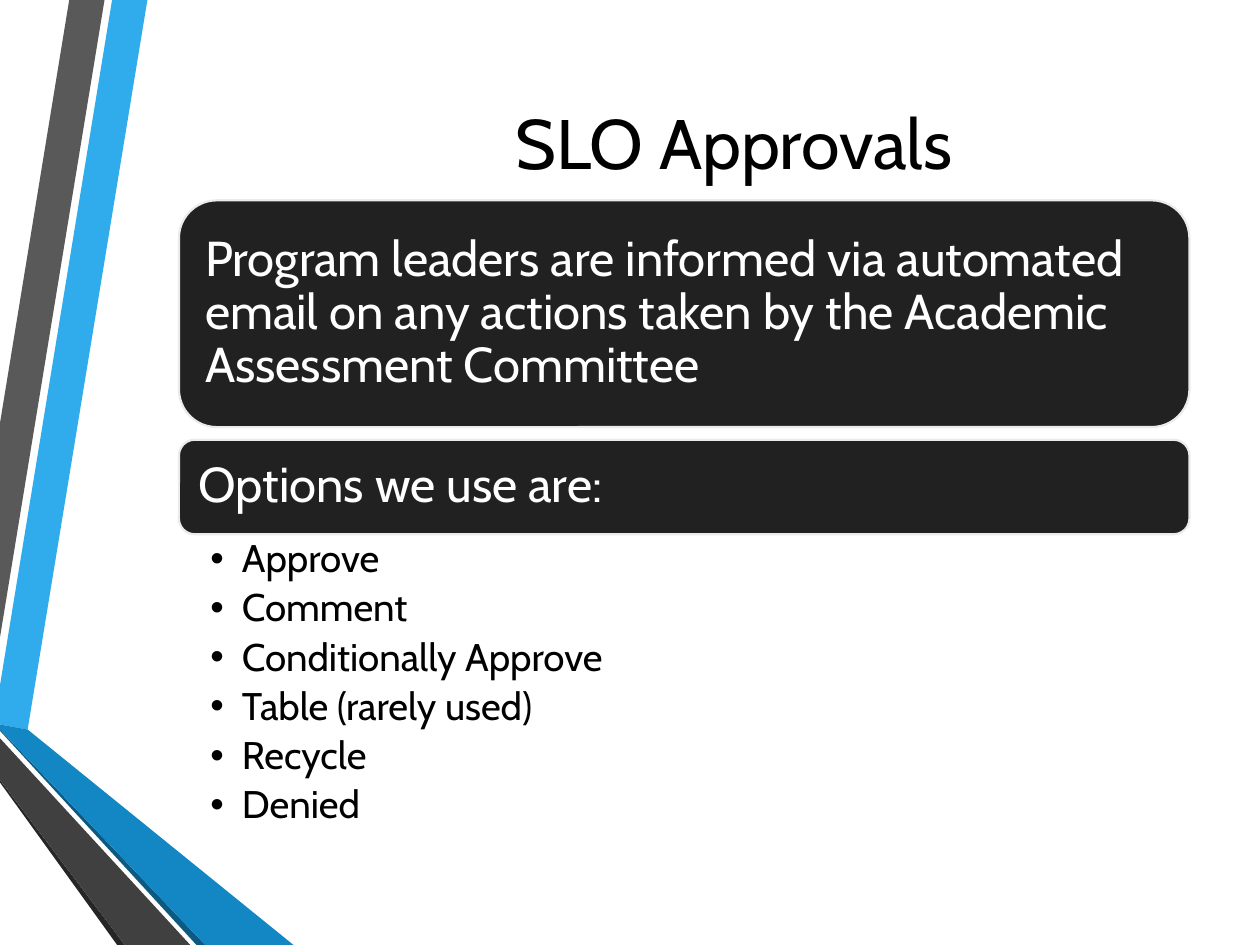
from dataclasses import dataclass

from pptx import Presentation
from pptx.dml.color import RGBColor
from pptx.enum.shapes import MSO_SHAPE
from pptx.enum.text import MSO_ANCHOR, MSO_AUTO_SIZE, PP_ALIGN
from pptx.oxml.xmlchemy import OxmlElement
from pptx.util import Emu, Inches, Pt

ROUNDED = MSO_SHAPE.ROUNDED_RECTANGLE
TOP, MIDDLE = MSO_ANCHOR.TOP, MSO_ANCHOR.MIDDLE
NO_FIT = MSO_AUTO_SIZE.NONE
LEFT, CENTER = PP_ALIGN.LEFT, PP_ALIGN.CENTER

FONT = "Cabin"
BLACK = RGBColor(0x00, 0x00, 0x00)
WHITE = RGBColor(0xFF, 0xFF, 0xFF)
CARD_FILL = RGBColor(0x21, 0x21, 0x21)
CARD_EDGE = RGBColor(0xEB, 0xEB, 0xEB)
SKY = RGBColor(0x30, 0xAC, 0xEC)
BLUE = RGBColor(0x12, 0x87, 0xC3)
NAVY = RGBColor(0x0C, 0x5A, 0x82)
GRAY = RGBColor(0x59, 0x59, 0x59)
DARK_GRAY = RGBColor(0x40, 0x40, 0x40)
CHARCOAL = RGBColor(0x26, 0x26, 0x26)

# The slide is a grid of square cells
COLUMNS, ROWS = 100, 75
SLIDE_WIDTH = Inches(10)
CELL = SLIDE_WIDTH / COLUMNS
CONTENT_LEFT, CONTENT_WIDTH = 14.2, 80.2


def cells(count: float) -> Emu:
    return Emu(round(count * CELL))


@dataclass(frozen=True)
class Area:
    left: float
    top: float
    width: float
    height: float

    def lengths(self) -> tuple[Emu, Emu, Emu, Emu]:
        return cells(self.left), cells(self.top), cells(self.width), cells(self.height)


@dataclass(frozen=True)
class Ribbon:
    color: RGBColor
    corners: tuple[tuple[float, float], ...]


@dataclass(frozen=True)
class Card:
    text: str
    top: float
    height: float


RIBBONS = (
    Ribbon(SKY, ((0, 54.4), (0, 57.5), (2.2, 57.9), (11.7, 0), (8.9, 0))),
    Ribbon(GRAY, ((8.3, 0), (5.5, 0), (0, 33.6), (0, 50.6))),
    Ribbon(CHARCOAL, ((0, 61.9), (0, 62.1), (9.3, ROWS), (9.9, ROWS))),
    Ribbon(NAVY, ((0, 57.9), (0, 58), (15.6, ROWS), (16.3, ROWS))),
    Ribbon(BLUE, ((0, 57.9), (16.3, ROWS), (23.3, ROWS), (2.2, 57.9), (0, 57.5))),
    Ribbon(DARK_GRAY, ((0, 61.9), (9.9, ROWS), (15.1, ROWS), (0, 58.6))),
)
CARDS = (
    Card("Program leaders are informed via automated email on any actions "
         "taken by the Academic Assessment Committee", 15.9, 18),
    Card("Options we use are:", 34.9, 7.5),
)
OPTIONS = ("Approve", "Comment", "Conditionally Approve",
           "Table (rarely used)", "Recycle", "Denied")


def add_text(paragraph, text: str, size: float, color: RGBColor) -> None:
    run = paragraph.add_run()
    run.text = text
    run.font.name = FONT
    run.font.size = Pt(size)
    run.font.color.rgb = color


def place(shape, area: Area) -> None:
    shape.left, shape.top, shape.width, shape.height = area.lengths()


def set_frame(frame, anchor, left: float, right: float, vertical: float) -> None:
    frame.word_wrap = True
    frame.auto_size = NO_FIT
    frame.vertical_anchor = anchor
    frame.margin_left, frame.margin_right = cells(left), cells(right)
    frame.margin_top = frame.margin_bottom = cells(vertical)


def draw_ribbon(slide, ribbon: Ribbon) -> None:
    start, *others = [(cells(x), cells(y)) for x, y in ribbon.corners]
    builder = slide.shapes.build_freeform(*start)
    builder.add_line_segments(others, close=True)
    shape = builder.convert_to_shape()
    shape.shadow.inherit = False
    shape.fill.solid()
    shape.fill.fore_color.rgb = ribbon.color
    shape.line.fill.background()
    # Ribbons lie behind the title
    slide.shapes.title.element.addprevious(shape.element)


def draw_card(slide, card: Card) -> None:
    area = Area(CONTENT_LEFT, card.top, CONTENT_WIDTH, card.height)
    shape = slide.shapes.add_shape(ROUNDED, *area.lengths())
    shape.shadow.inherit = False
    shape.fill.solid()
    shape.fill.fore_color.rgb = CARD_FILL
    shape.line.color.rgb = CARD_EDGE
    shape.line.width = Pt(1.25)
    set_frame(shape.text_frame, MIDDLE, 1.2, 1.2, 1.2)
    paragraph = shape.text_frame.paragraphs[0]
    paragraph.alignment = LEFT
    paragraph.line_spacing = 0.9
    add_text(paragraph, card.text, 28, WHITE)


def add_option(paragraph, option: str) -> None:
    paragraph.level = 1
    paragraph.line_spacing = 0.9
    paragraph.space_before = Pt(0)
    paragraph.space_after = Pt(4.4)
    properties = paragraph._p.get_or_add_pPr()
    properties.set("marL", str(cells(2.5)))
    properties.set("indent", str(cells(-2.5)))
    bullet = OxmlElement("a:buChar")
    bullet.set("char", "•")
    properties.append(bullet)
    add_text(paragraph, option, 22, BLACK)


def main() -> None:
    presentation = Presentation()
    presentation.slide_width = SLIDE_WIDTH
    presentation.slide_height = cells(ROWS)
    slide = presentation.slides.add_slide(presentation.slide_layouts[1])

    # Decoration at the left edge
    for ribbon in RIBBONS:
        draw_ribbon(slide, ribbon)

    # Title
    title = slide.shapes.title
    place(title, Area(23.4, 4.2, 69.7, 14.1))
    set_frame(title.text_frame, MIDDLE, 1, 1, 0.5)
    heading = title.text_frame.paragraphs[0]
    heading.alignment = CENTER
    add_text(heading, "SLO Approvals", 40, BLACK)

    # Statement cards
    for card in CARDS:
        draw_card(slide, card)

    # Options below the last card
    body = slide.placeholders[1]
    options_top = CARDS[-1].top + CARDS[-1].height
    place(body, Area(CONTENT_LEFT, options_top, CONTENT_WIDTH, 25.8))
    frame = body.text_frame
    set_frame(frame, TOP, 2.5, 2.2, 0.4)
    for index, option in enumerate(OPTIONS):
        add_option(frame.add_paragraph() if index else frame.paragraphs[0], option)

    presentation.save("out.pptx")


if __name__ == "__main__":
    main()
